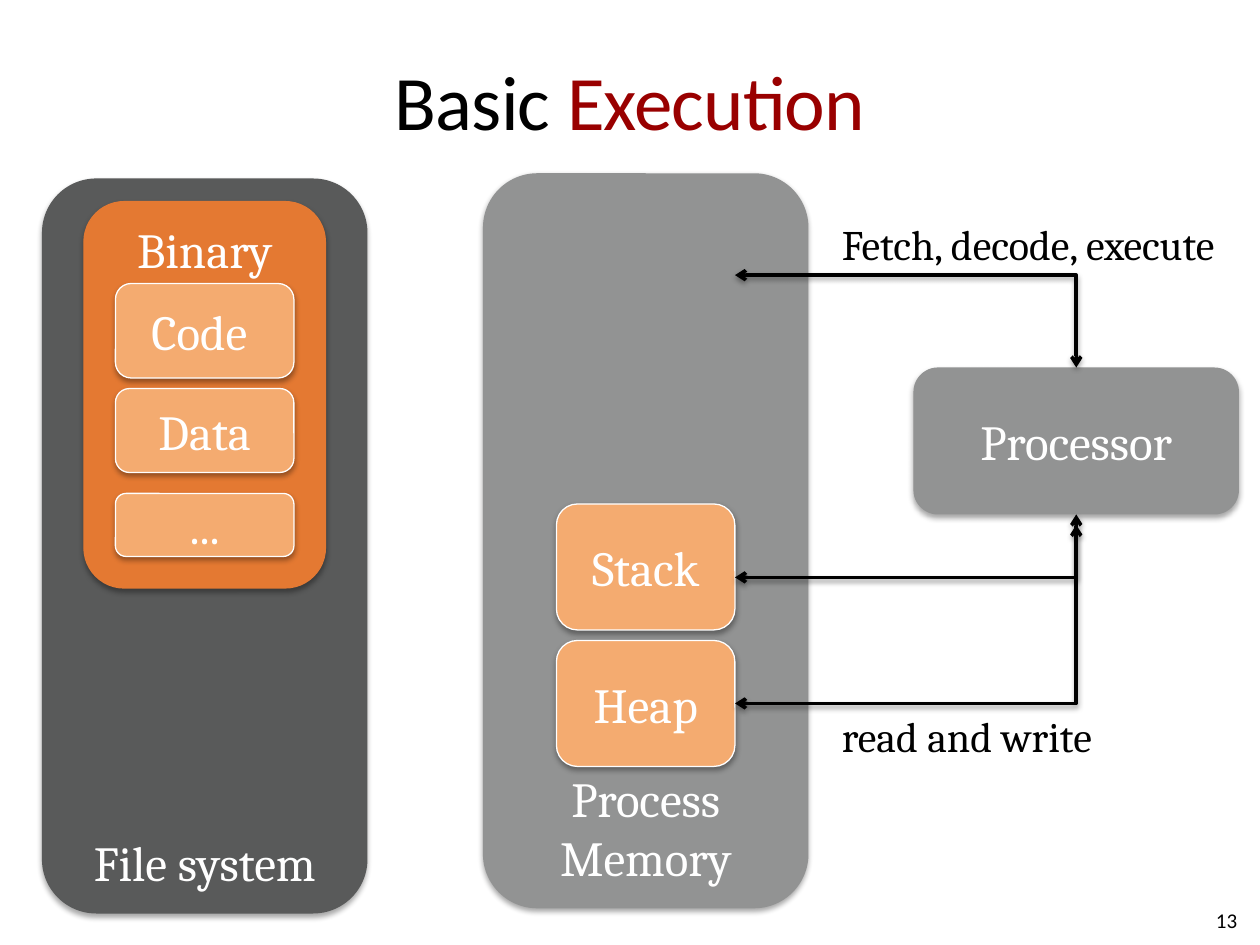
from lxml import etree
from pptx import Presentation, util as u
from pptx.dml.color import RGBColor
from pptx.enum import shapes, text
from pptx.oxml import parse_xml
from pptx.oxml.ns import nsdecls, qn

PX = u.Inches(1) // 120
COLORS = {
    "black": "000000", "white": "FFFFFF", "red": "990000",
    "dark": "595A5A", "gray": "929393", "orange": "E47932", "peach": "F4AB70",
}
TOP, MIDDLE, BOTTOM = (text.MSO_ANCHOR.TOP, text.MSO_ANCHOR.MIDDLE,
                       text.MSO_ANCHOR.BOTTOM)
LEFT, CENTER, RIGHT = text.PP_ALIGN.LEFT, text.PP_ALIGN.CENTER, text.PP_ALIGN.RIGHT


def rgb(name):
    return RGBColor.from_string(COLORS[name])


def px(*lengths):
    return [length * PX for length in lengths]


def style(paragraph, size, color, font="Cambria", align=CENTER):
    paragraph.alignment = align
    paragraph.font.size = u.Pt(size)
    paragraph.font.name = font
    paragraph.font.color.rgb = rgb(color)


def add_shadow(shape, distance, opacity):
    shape._element.spPr.append(parse_xml(
        f'<a:effectLst {nsdecls("a")}>'
        f'<a:outerShdw blurRad="40000" dist="{distance}" dir="5400000" rotWithShape="0">'
        f'<a:srgbClr val="{COLORS["black"]}"><a:alpha val="{opacity * 1000}"/></a:srgbClr>'
        '</a:outerShdw></a:effectLst>'))


def add_box(slide, label, box, fill, line=None, anchor=MIDDLE):
    shape = slide.shapes.add_shape(shapes.MSO_SHAPE.ROUNDED_RECTANGLE, *px(*box))
    shape.fill.solid()
    shape.fill.fore_color.rgb = rgb(fill)
    if line:
        shape.line.color.rgb = rgb(line)
        shape.line.width = u.Pt(0.75)
    else:
        shape.line.fill.background()
    add_shadow(shape, 23000, 35)
    frame = shape.text_frame
    frame.vertical_anchor = anchor
    paragraph = frame.paragraphs[0]
    paragraph.text = label
    style(paragraph, 28, "white")


def add_label(slide, label, box, size=24, font="Cambria", align=LEFT,
              anchor=TOP, wrap=False):
    frame = slide.shapes.add_textbox(*px(*box)).text_frame
    frame.word_wrap = wrap
    frame.vertical_anchor = anchor
    paragraph = frame.paragraphs[0]
    paragraph.text = label
    style(paragraph, size, "black", font, align)


def add_elbow(slide, start, end):
    """Double-headed connector with a single bend: across, then up or down."""
    connector = slide.shapes.add_connector(
        shapes.MSO_CONNECTOR.ELBOW, *px(*start, *end))
    connector._element.spPr.find(qn("a:prstGeom")).set("prst", "bentConnector2")
    connector.line.color.rgb = rgb("black")
    connector.line.width = u.Pt(2)
    line = connector.line._get_or_add_ln()
    for tag in ("a:headEnd", "a:tailEnd"):
        etree.SubElement(line, qn(tag)).set("type", "arrow")
    add_shadow(connector, 20000, 38)


def set_title(slide, parts):
    title = slide.shapes.title
    title.left, title.top, title.width, title.height = px(60, 20, 1080, 150)
    frame = title.text_frame
    frame.margin_left = frame.margin_right = 0
    frame.vertical_anchor = MIDDLE
    paragraph = frame.paragraphs[0]
    style(paragraph, 44, "black", "Calibri")
    for words, color in parts:
        run = paragraph.add_run()
        run.text = words
        run.font.color.rgb = rgb(color)
        run.font._element.set("spc", "-50")


def main():
    presentation = Presentation()
    presentation.slide_width, presentation.slide_height = px(1200, 900)
    slide = presentation.slides.add_slide(presentation.slide_layouts[5])

    # Title and page number
    set_title(slide, [("Basic", "black"), (" Execution", "red")])
    add_label(slide, "13", (910, 852, 280, 48), 12, "Calibri", RIGHT, MIDDLE, True)

    # Containers
    add_box(slide, "Process\vMemory", (460, 165, 310, 700), "gray", anchor=BOTTOM)
    add_box(slide, "File system", (40, 170, 310, 700), "dark", anchor=BOTTOM)
    add_box(slide, "Binary", (80, 192, 230, 368), "orange", "orange", TOP)

    # Sections of the binary and of the process memory
    for label, left, top, height in [
        ("Code ", 110, 270, 90), ("Data", 110, 370, 80), ("...", 110, 470, 60),
        ("Stack", 530, 480, 120), ("Heap", 530, 610, 120),
    ]:
        add_box(slide, label, (left, top, 170, height), "peach", "white")

    # Processor and its links to memory
    add_box(slide, "Processor", (870, 350, 310, 140), "gray")
    for memory_y, processor_y in [(262, 350), (550, 500), (670, 490)]:
        add_elbow(slide, (700, memory_y), (1025, processor_y))
    add_label(slide, "Fetch, decode, execute", (790, 202, 409, 60))
    add_label(slide, "read and write", (790, 671, 277, 60))

    presentation.save("out.pptx")


if __name__ == "__main__":
    main()
